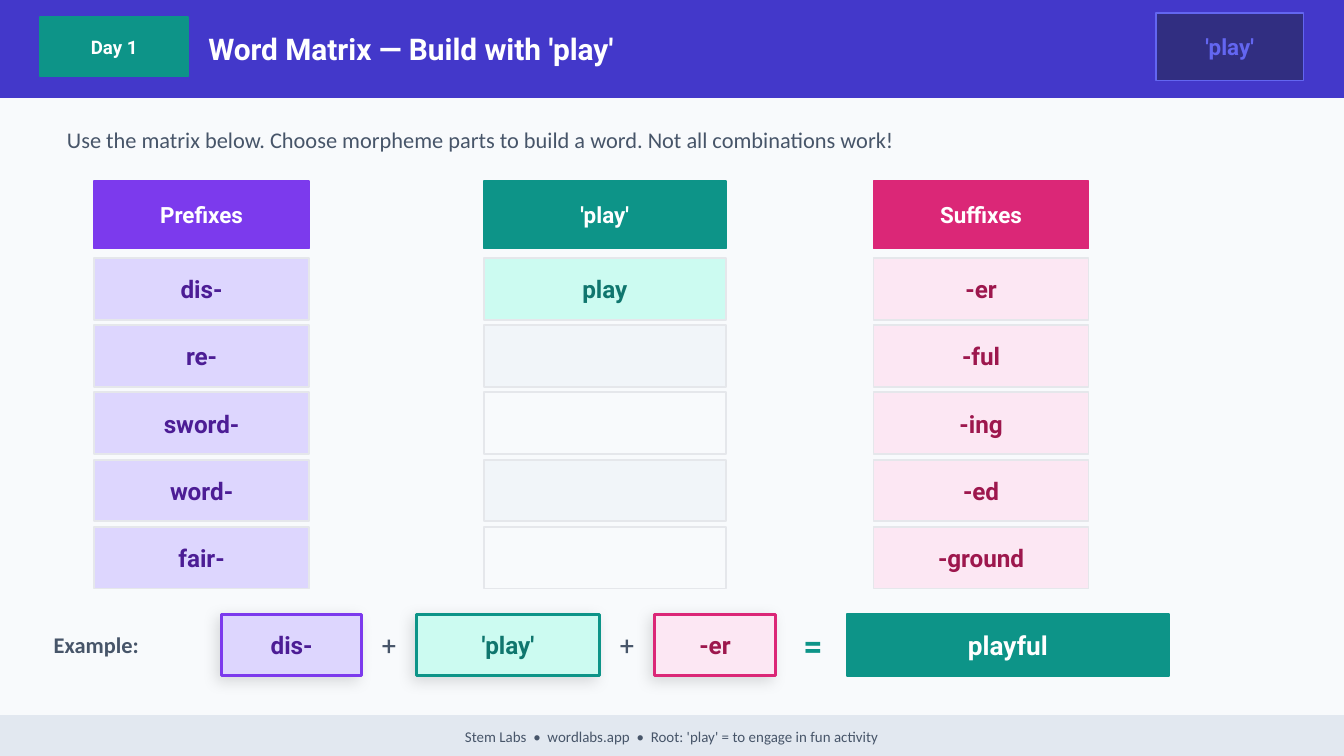
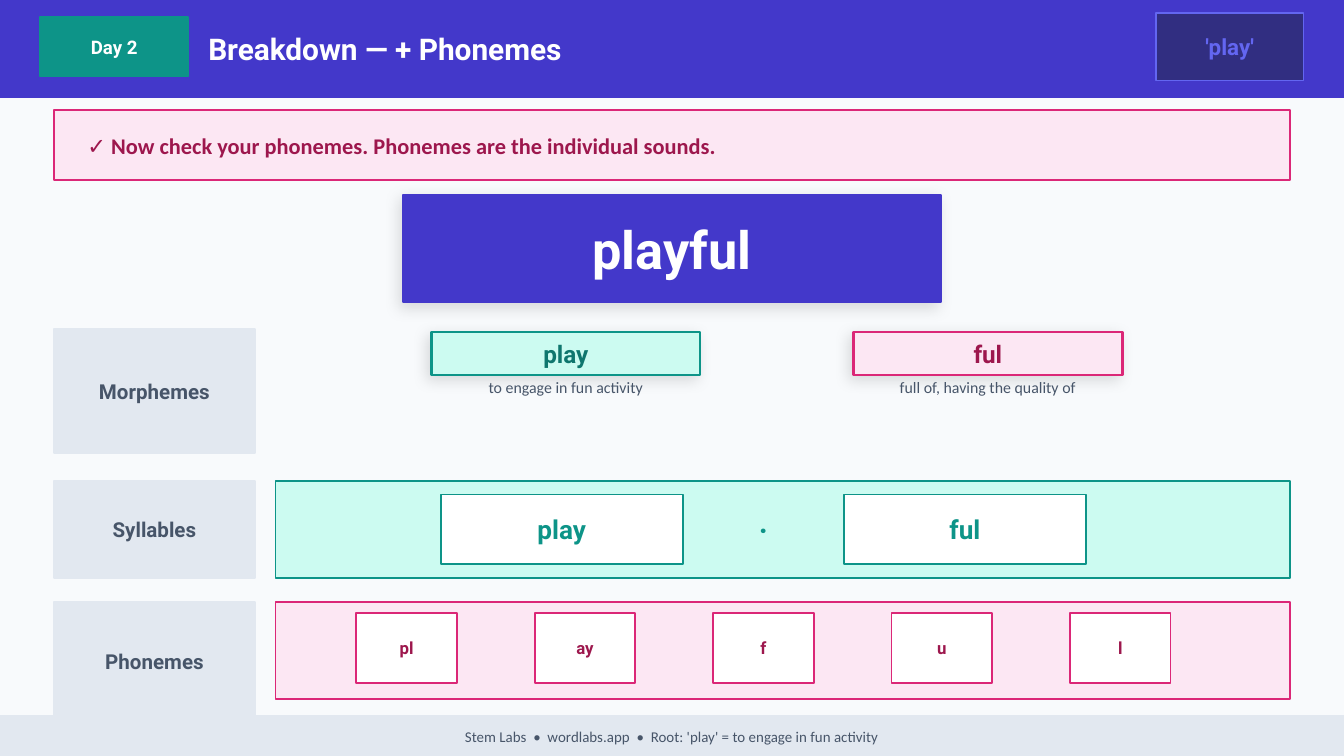
from itertools import zip_longest

from lxml import etree
from pptx import Presentation
from pptx.dml.color import RGBColor
from pptx.enum.shapes import MSO_SHAPE
from pptx.enum.text import MSO_ANCHOR, PP_ALIGN
from pptx.oxml.ns import qn
from pptx.util import Inches, Pt

RECT = MSO_SHAPE.RECTANGLE
MIDDLE, TOP = MSO_ANCHOR.MIDDLE, MSO_ANCHOR.TOP
LEFT, CENTER = PP_ALIGN.LEFT, PP_ALIGN.CENTER
HEAD, BODY = "Roboto", "Calibri"

WHITE = RGBColor(0xFF, 0xFF, 0xFF)
PAPER = RGBColor(0xF8, 0xFA, 0xFC)
STRIPE = RGBColor(0xF1, 0xF5, 0xF9)
RULE = RGBColor(0xE5, 0xE7, 0xEB)
MIST = RGBColor(0xE2, 0xE8, 0xF0)
SLATE = RGBColor(0x47, 0x55, 0x69)
INDIGO = RGBColor(0x43, 0x38, 0xCA)
NAVY = RGBColor(0x31, 0x2E, 0x81)
IRIS = RGBColor(0x63, 0x66, 0xF1)
VIOLET = RGBColor(0x7C, 0x3A, 0xED)
LILAC = RGBColor(0xDD, 0xD6, 0xFE)
PLUM = RGBColor(0x4C, 0x1D, 0x95)
TEAL = RGBColor(0x0D, 0x94, 0x88)
MINT = RGBColor(0xCC, 0xFB, 0xF1)
PINE = RGBColor(0x0F, 0x76, 0x6E)
PINK = RGBColor(0xDB, 0x27, 0x77)
BLUSH = RGBColor(0xFC, 0xE7, 0xF3)
WINE = RGBColor(0x9D, 0x17, 0x4D)

# Each word part has a strong, a pale and a dark tone
PREFIX = (VIOLET, LILAC, PLUM)
ROOT = (TEAL, MINT, PINE)
SUFFIX = (PINK, BLUSH, WINE)

WIDE = 10
FOOT = "Stem Labs  •  wordlabs.app  •  Root: 'play' = to engage in fun activity"


def write(shape, text, size, color, font=HEAD, bold=True, align=CENTER,
          anchor=MIDDLE, inset=0):
    frame = shape.text_frame
    frame.word_wrap = True
    frame.vertical_anchor = anchor
    frame.margin_left = frame.margin_right = Inches(inset)
    frame.margin_top = frame.margin_bottom = 0
    para = frame.paragraphs[0]
    para.text = text
    para.alignment = align
    para.font.name = font
    para.font.size = Pt(size)
    para.font.bold = bold
    para.font.color.rgb = color


def label(slide, area, text, size, color, **style):
    shape = slide.shapes.add_textbox(*map(Inches, area))
    write(shape, text, size, color, **style)


def lift(shape):
    """Give the shape a soft drop shadow."""
    effects = shape._element.spPr.find(qn("a:effectLst"))
    shade = etree.SubElement(effects, qn("a:outerShdw"), blurRad=str(Pt(8)),
                             dist=str(Pt(3)), dir=str(135 * 60000),
                             algn="bl", rotWithShape="0")
    tone = etree.SubElement(shade, qn("a:srgbClr"), val="000000")
    etree.SubElement(tone, qn("a:alpha"), val="12000")


def block(slide, area, fill, edge=None, text="", size=13, color=WHITE,
          weight=1, raised=False, **style):
    shape = slide.shapes.add_shape(RECT, *map(Inches, area))
    shape.shadow.inherit = False
    shape.fill.solid()
    shape.fill.fore_color.rgb = fill
    shape.line.color.rgb = edge or fill
    shape.line.width = Pt(weight)
    if raised:
        lift(shape)
    if text:
        write(shape, text, size, color, **style)


def tile(slide, area, text, tones):
    """Raised tile for one morpheme."""
    edge, fill, color = tones
    block(slide, area, fill, edge, text, 13, color, weight=1.5, raised=True)


def start(deck, day, title):
    """New slide with the shared header and footer."""
    slide = deck.slides.add_slide(deck.slide_layouts[6])
    slide.background.fill.solid()
    slide.background.fill.fore_color.rgb = PAPER
    block(slide, (0, 0, WIDE, 0.72), INDIGO)
    block(slide, (0.3, 0.13, 1.1, 0.44), TEAL, text=day, size=10)
    label(slide, (1.55, 0, 8.1, 0.72), title, 16, WHITE, align=LEFT)
    block(slide, (8.6, 0.1, 1.1, 0.5), NAVY, IRIS, "'play'", 12, IRIS)
    block(slide, (0, 5.33, WIDE, 0.3), MIST, text=FOOT, size=8, color=SLATE,
          font=BODY, bold=False)
    return slide


# Word matrix

def column(slide, x, y, width, head, tones, parts, rows=5):
    strong, pale, dark = tones
    block(slide, (x, y, width, 0.5), strong, text=head, size=12)
    for row, part in zip_longest(range(rows), parts, fillvalue=""):
        blank = STRIPE if row % 2 else PAPER
        block(slide, (x, y + 0.57 + row * 0.5, width, 0.46),
              pale if part else blank, RULE, part, 13, dark)


def example(slide, x, y, high=0.46):
    label(slide, (x, y, 1.2, high), "Example:", 12, SLATE, font=BODY, align=LEFT)
    left = x + 1.25
    sums = (("dis-", 1.04, PREFIX), ("'play'", 1.36, ROOT), ("-er", 0.9, SUFFIX))
    for i, (text, width, tones) in enumerate(sums):
        if i:
            label(slide, (left - 0.38, y, 0.35, high), "+", 14, SLATE, bold=False)
        tile(slide, (left, y, width, high), text, tones)
        left += width + 0.41
    label(slide, (x + 5.45, y, 0.4, high), "=", 18, TEAL)
    block(slide, (x + 5.9, y, 2.4, high), TEAL, text="playful", size=14)


def matrix(deck):
    slide = start(deck, "Day 1", "Word Matrix — Build with 'play'")
    label(slide, (0.4, 0.82, 9.2, 0.44),
          "Use the matrix below. Choose morpheme parts to build a word. "
          "Not all combinations work!",
          12, SLATE, font=BODY, bold=False, align=LEFT, inset=0.1)
    column(slide, 0.7, 1.35, 1.6, "Prefixes", PREFIX,
           ("dis-", "re-", "sword-", "word-", "fair-"))
    column(slide, 3.6, 1.35, 1.8, "'play'", ROOT, ("play",))
    column(slide, 6.5, 1.35, 1.6, "Suffixes", SUFFIX,
           ("-er", "-ful", "-ing", "-ed", "-ground"))
    example(slide, 0.4, 4.57)


# Breakdown

def side(slide, x, y, high, text):
    block(slide, (x, y, 1.5, high), MIST, text=text, size=11, color=SLATE)


def morphs(slide, x, y):
    side(slide, x, y, 0.92, "Morphemes")
    parts = (("play", "to engage in fun activity", ROOT),
             ("ful", "full of, having the quality of", SUFFIX))
    for i, (part, sense, tones) in enumerate(parts):
        left = x + 2.81 + i * 3.14
        tile(slide, (left, y + 0.02, 2, 0.32), part, tones)
        label(slide, (left, y + 0.36, 2, 0.22), sense, 8.5, SLATE,
              font=BODY, bold=False, anchor=TOP)


def sounds(slide, x, y, high, name, tones, parts, first, last, width, drop,
           size, color):
    """Side label and a band of white cells, even from first to last."""
    edge, pale, _ = tones
    side(slide, x, y, high, name)
    block(slide, (x + 1.65, y, 7.55, 0.72), pale, edge)
    step = (last - first) / (len(parts) - 1)
    for i, part in enumerate(parts):
        block(slide, (x + first + i * step, y + drop, width, 0.52),
              WHITE, edge, part, size, color)


def breakdown(deck):
    slide = start(deck, "Day 2", "Breakdown — + Phonemes")
    block(slide, (0.4, 0.82, 9.2, 0.52), BLUSH, PINK,
          "✓ Now check your phonemes. Phonemes are the individual sounds.",
          12, WINE, font=BODY, align=LEFT, inset=0.25)
    block(slide, (3, 1.45, 4, 0.8), INDIGO, text="playful", size=28, raised=True)
    morphs(slide, 0.4, 2.45)
    sounds(slide, 0.4, 3.58, 0.72, "Syllables", ROOT, ("play", "ful"),
           first=2.88, last=5.88, width=1.8, drop=0.1, size=14, color=TEAL)
    label(slide, (5.08, 3.68, 1.2, 0.52), "·", 16, TEAL)
    sounds(slide, 0.4, 4.48, 0.88, "Phonemes", SUFFIX,
           ("pl", "ay", "f", "u", "l"),
           first=2.25, last=7.56, width=0.75, drop=0.08, size=9, color=WINE)


def main():
    deck = Presentation()
    deck.slide_width = Inches(WIDE)
    deck.slide_height = deck.slide_width * 9 // 16
    matrix(deck)
    breakdown(deck)
    deck.save("out.pptx")


if __name__ == "__main__":
    main()
